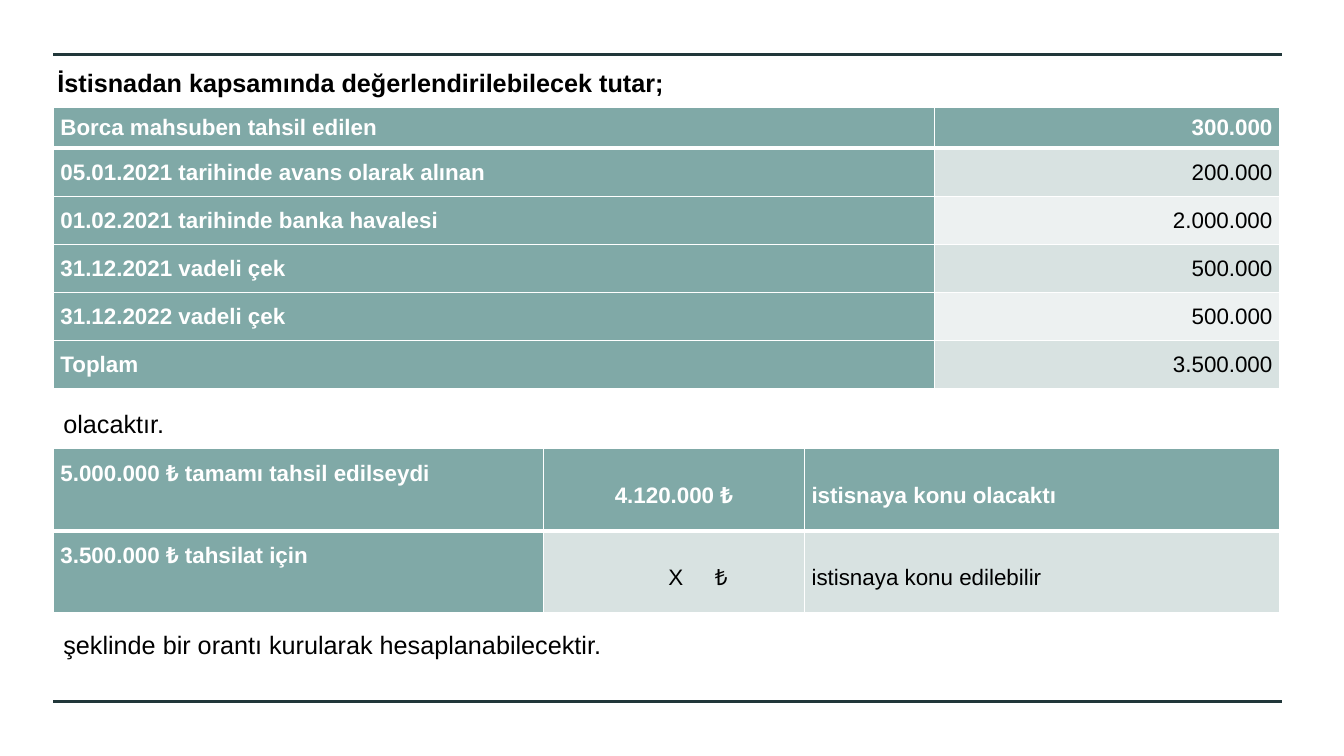
from lxml import etree
from pptx import Presentation
from pptx.dml.color import RGBColor
from pptx.enum.text import MSO_ANCHOR, PP_ALIGN
from pptx.oxml.ns import qn
from pptx.util import Inches, Pt

LEFT, RIGHT, MID = PP_ALIGN.LEFT, PP_ALIGN.RIGHT, PP_ALIGN.CENTER
TOP, CENTRE = MSO_ANCHOR.TOP, MSO_ANCHOR.MIDDLE
UNIT = Inches(0.1)
EDGE, WIDE = 5.3, 121.6
DARK, TEAL, PALE, LIGHT = "21373A", "80A9A7", "D8E2E1", "EDF1F1"
BLACK, WHITE = "000000", "FFFFFF"

SUMS = [
    ("Borca mahsuben tahsil edilen", "300.000"),
    ("05.01.2021 tarihinde avans olarak alınan", "200.000"),
    ("01.02.2021 tarihinde banka havalesi", "2.000.000"),
    ("31.12.2021 vadeli çek", "500.000"),
    ("31.12.2022 vadeli çek", "500.000"),
    ("Toplam", "3.500.000"),
]
RATIO = [
    ("5.000.000 ₺ tamamı tahsil edilseydi", "4.120.000 ₺", "istisnaya konu olacaktı"),
    ("3.500.000 ₺ tahsilat için", "\tX\t₺", "istisnaya konu edilebilir"),
]


def grid(*cells):
    """Turn columns and rows of the slide grid into lengths."""
    return [round(UNIT * cell) for cell in cells]


def tint(code):
    """Return the colour of a hex string."""
    return RGBColor.from_string(code)


def put(item, form):
    """Set each format value on an item."""
    for name, value in form.items():
        setattr(item, name, value)


def write(frame, text, size, code=BLACK, bold=False, **form):
    """Write one formatted paragraph into a text frame."""
    para = frame.paragraphs[0]
    put(para, form)
    run = para.add_run()
    run.text = text
    put(run.font, {"name": "Arial", "size": Pt(size), "bold": bold})
    run.font.color.rgb = tint(code)
    return para


def rule(slide, row):
    """Draw a dark rule across the slide."""
    x, y, end = grid(EDGE, row, 127.2)
    line = slide.shapes.add_connector(1, x, y, end, y)
    line.line.color.rgb = tint(DARK)
    line.line.width = Pt(2.25)
    etree.SubElement(line._element.spPr, qn("a:effectLst"))


def head(slide, text):
    """Set the heading in the body placeholder and drop the title."""
    title, body = slide.placeholders
    title._element.getparent().remove(title._element)
    put(body, dict(zip(("left", "top", "width", "height"), grid(4.7, 6.2, WIDE, 62.6))))
    para = write(body.text_frame, text, 18, bold=True, space_before=Pt(10))
    props = para._p.get_or_add_pPr()
    props.set("marL", "0")
    props.set("indent", "0")
    etree.SubElement(props, qn("a:buNone"))


def note(slide, text, row, wide):
    """Add a single line of text under a table."""
    box = slide.shapes.add_textbox(*grid(EDGE, row, wide, 5.6))
    box.text_frame.word_wrap = False
    write(box.text_frame, text, 18, line_spacing=1.5)


def border(cell, row):
    """Give a cell white edges, thick between head and body."""
    props = cell._tc.get_or_add_tcPr()
    thick = {"lnT": row == 1, "lnB": row == 0}
    for side in ("lnL", "lnR", "lnT", "lnB"):
        width = Pt(3 if thick.get(side) else 1)
        edge = etree.SubElement(props, qn("a:" + side), w=str(width))
        fill = etree.SubElement(edge, qn("a:solidFill"))
        etree.SubElement(fill, qn("a:srgbClr"), val=WHITE)


def table(slide, data, top, cols, rows, sides, space=1.0, first=CENTRE):
    """Add a banded table with a coloured head row and first column."""
    frame = slide.shapes.add_table(
        len(data), len(cols), *grid(EDGE, top, sum(cols), sum(rows)))
    for col, wide in zip(frame.table.columns, grid(*cols)):
        col.width = wide
    for row, high in zip(frame.table.rows, grid(*rows)):
        row.height = high
    for r, texts in enumerate(data):
        for c, text in enumerate(texts):
            cell = frame.table.cell(r, c)
            main = r == 0 or c == 0
            pad = Inches(0.07)
            put(cell, {"margin_left": pad, "margin_right": pad,
                       "margin_top": 0, "margin_bottom": 0,
                       "vertical_anchor": CENTRE if c else first})
            border(cell, r)
            cell.fill.solid()
            cell.fill.fore_color.rgb = tint(TEAL if main else PALE if r % 2 else LIGHT)
            para = write(cell.text_frame, text, 16, WHITE if main else BLACK, main,
                         alignment=sides[c], line_spacing=space)
            if "\t" in text:
                stop(para, 11.7, 16.3)


def stop(para, *cols):
    """Align a paragraph left with tab stops at the given columns."""
    para.alignment = LEFT
    tabs = etree.SubElement(para._p.get_or_add_pPr(), qn("a:tabLst"))
    for place in grid(*cols):
        etree.SubElement(tabs, qn("a:tab"), pos=str(place), algn="l")


def main():
    """Build and save the slide."""
    deck = Presentation()
    deck.slide_width, deck.slide_height = grid(133.3, 75)
    slide = deck.slides.add_slide(deck.slide_layouts[1])
    for row in (5.4, 69.6):
        rule(slide, row)
    head(slide, "İstisnadan kapsamında değerlendirilebilecek tutar;")
    table(slide, SUMS, 10.7, (87.4, 34.2), [4] + [4.78] * 5, (LEFT, RIGHT))
    note(slide, "olacaktır.", 38.5, 12.1)
    table(slide, RATIO, 44.5, (48.6, 25.9, 47.1), [8.15] * 2,
          (LEFT, MID, LEFT), 1.5, TOP)
    note(slide, "şeklinde bir orantı kurularak hesaplanabilecektir.", 60.4, 56.6)
    deck.save("out.pptx")


if __name__ == "__main__":
    main()
